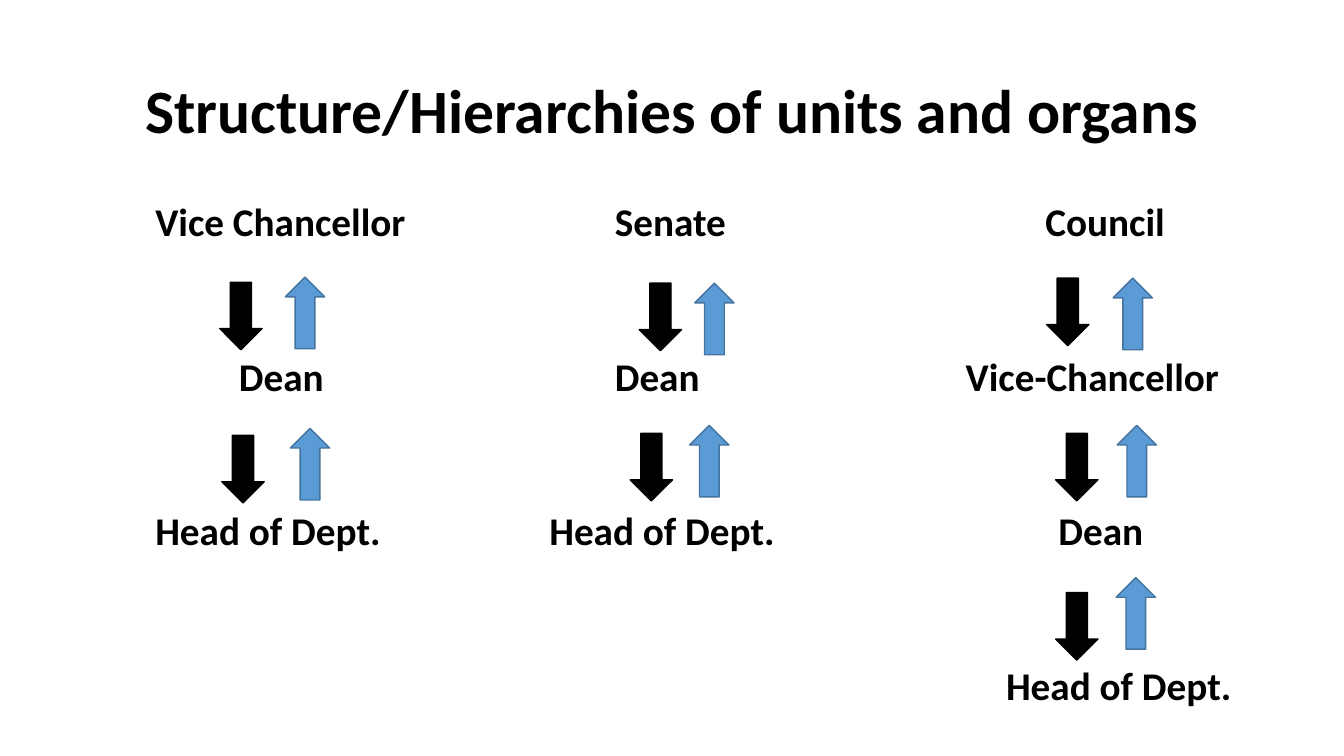
from lxml import etree
from pptx import Presentation
from pptx.dml.color import RGBColor
from pptx.enum import shapes, text
from pptx.oxml import ns
from pptx.util import Inches, Pt

BLACK = RGBColor(0x00, 0x00, 0x00)
BLUE = RGBColor(0x5B, 0x9B, 0xD5)
DARK_BLUE = RGBColor(0x43, 0x73, 0x9E)
FONT = "Calibri"

presentation = Presentation()
presentation.slide_width = Inches(13.33)
presentation.slide_height = Inches(7.5)
slide = presentation.slides.add_slide(presentation.slide_layouts[1])
title, body = slide.placeholders


def place(shape, left, top, width, height):
    shape.left, shape.top = Inches(left), Inches(top)
    shape.width, shape.height = Inches(width), Inches(height)
    shape.text_frame.word_wrap = True
    shape.text_frame.auto_size = text.MSO_AUTO_SIZE.NONE


def format_paragraph(paragraph, size, line_spacing):
    paragraph.line_spacing = line_spacing
    for run in paragraph.runs:
        run.font.name = FONT
        run.font.size = Pt(size)
        run.font.bold = True
        run.font.color.rgb = BLACK


# Title
place(title, 0.92, 0.4, 11.5, 1.45)
title.text_frame.text = "Structure/Hierarchies of units and organs"
title.text_frame.vertical_anchor = text.MSO_ANCHOR.MIDDLE
title.text_frame.paragraphs[0].alignment = text.PP_ALIGN.CENTER
format_paragraph(title.text_frame.paragraphs[0], 44, 0.9)

# Hierarchies from top to bottom: each name with its indent in inches
hierarchies = [
    [("Vice Chancellor", 0.52), ("Dean", 1.35), ("Head of Dept.", 0.52)],
    [("Senate", 1.25), ("Dean", 1.25), ("Head of Dept.", 0.6)],
    [("Council", 1.69), ("Vice-Chancellor", 0.9), ("Dean", 1.82),
     ("Head of Dept.", 1.3)],
]
COLUMN_WIDTH = 3.83
for column, hierarchy in enumerate(hierarchies):
    box = body if column == 0 else slide.shapes.add_textbox(0, 0, 0, 0)
    place(box, 0.92 + column * COLUMN_WIDTH, 2, COLUMN_WIDTH, 5.5)
    box.text_frame.vertical_anchor = text.MSO_ANCHOR.TOP
    for row, (name, indent) in enumerate(hierarchy):
        if row == 0:
            paragraph = box.text_frame.paragraphs[0]
        else:
            paragraph = box.text_frame.add_paragraph()
        paragraph.text = name
        format_paragraph(paragraph, 28, 0.8)
        paragraph.space_before = Pt(83.5 if row else 10)

        # Left margin without a bullet
        properties = paragraph._p.get_or_add_pPr()
        properties.set("marL", str(Inches(indent)))
        properties.set("indent", "0")
        etree.SubElement(properties, ns.qn("a:buNone"))

# Arrows between levels: left and top of each
down_arrows = [
    (2.18, 2.8), (2.2, 4.32),
    (6.34, 2.81), (6.25, 4.3),
    (10.38, 2.76), (10.47, 4.3), (10.47, 5.88),
]
up_arrows = [
    (2.83, 2.75), (2.88, 4.25),
    (6.89, 2.81), (6.84, 4.22),
    (11.04, 2.76), (11.08, 4.22), (11.07, 5.73),
]
arrow_styles = [
    (shapes.MSO_SHAPE.DOWN_ARROW, down_arrows, 0.42, 0.67, BLACK, BLACK),
    (shapes.MSO_SHAPE.UP_ARROW, up_arrows, 0.39, 0.71, BLUE, DARK_BLUE),
]
for kind, positions, width, height, fill, line in arrow_styles:
    for left, top in positions:
        arrow = slide.shapes.add_shape(
            kind, Inches(left), Inches(top), Inches(width), Inches(height))
        arrow.shadow.inherit = False
        arrow.fill.solid()
        arrow.fill.fore_color.rgb = fill
        arrow.line.color.rgb = line
        arrow.line.width = Pt(1)

presentation.save("out.pptx")
